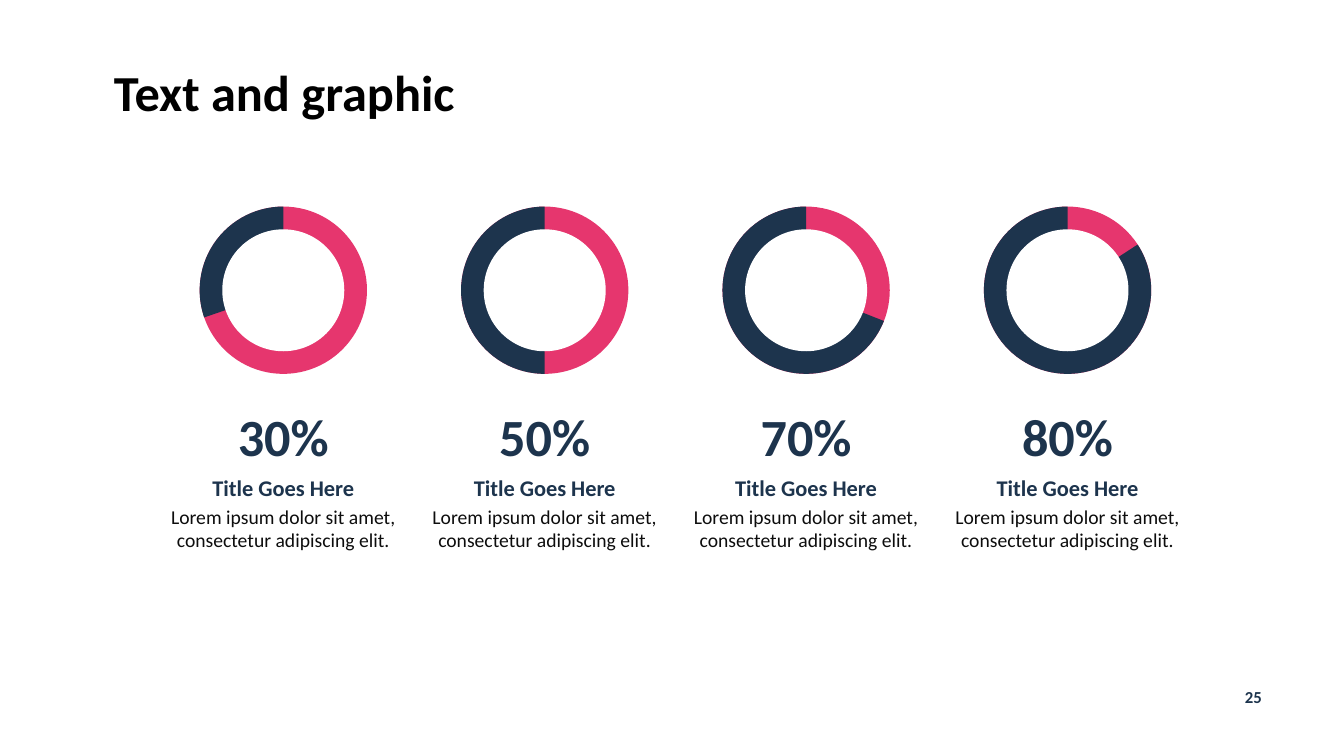
"""Build a slide with four percentage rings, each over a heading and a caption."""
from dataclasses import dataclass

from pptx import Presentation
from pptx.dml.color import RGBColor
from pptx.enum.shapes import MSO_SHAPE
from pptx.enum.text import MSO_ANCHOR, MSO_AUTO_SIZE, PP_ALIGN
from pptx.util import Inches, Pt


@dataclass(frozen=True)
class Theme:
    font: str = "Calibri"
    navy: str = "1D344D"
    pink: str = "E6366E"
    white: str = "FFFFFF"
    black: str = "000000"
    body: str = "0D0D0D"
    title_size: float = 36
    number_size: float = 37.3
    heading_size: float = 16
    caption_size: float = 14
    page_size: float = 12


th = Theme()
prs = Presentation()
prs.slide_width, prs.slide_height = Inches(13.33), Inches(7.5)
s = prs.slides.add_slide(prs.slide_layouts[5])


def place(center, top, width, height):
    """Turn percentages of the slide into left, top, width and height."""
    w, h = prs.slide_width, prs.slide_height
    return [round(share * side / 100) for share, side in
            ((center - width / 2, w), (top, h), (width, w), (height, h))]


def write(tf, lines, align=PP_ALIGN.CENTER, margin=(0.1, 0.05)):
    """Write one single-run paragraph for each (text, size, colour, bold)."""
    tf.word_wrap = True
    tf.auto_size = MSO_AUTO_SIZE.NONE
    tf.margin_left = tf.margin_right = Inches(margin[0])
    tf.margin_top = tf.margin_bottom = Inches(margin[1])
    for i, (text, size, color, bold) in enumerate(lines):
        p = tf.add_paragraph() if i else tf.paragraphs[0]
        p.alignment = align
        p.space_before = Pt(2.7 if i else 0)
        r = p.add_run()
        r.text = text
        r.font.name, r.font.size, r.font.bold = th.font, Pt(size), bold
        r.font.color.rgb = RGBColor.from_string(color)


title = s.shapes.title
title.left, title.top, title.width, title.height = place(37.4, 8.27, 59.34, 8.67)
title.text_frame.vertical_anchor = MSO_ANCHOR.MIDDLE
write(title.text_frame, [("Text and graphic", th.title_size, th.black, True)],
      PP_ALIGN.LEFT)
title.text_frame.paragraphs[0].line_spacing = 0.9

first_center, pitch = 21.08, 19.45
ring = (27.33, 12.45, 22.13)
hole = (30.33, 9.08, 16.13)
rings = [("30%", 161), ("50%", 90), ("70%", 21.6), ("80%", 326.9)]

for col, (number, start) in enumerate(rings):
    center = first_center + col * pitch
    group = s.shapes.add_group_shape()
    for kind, size, color in ((MSO_SHAPE.OVAL, ring, th.pink),
                              (MSO_SHAPE.PIE, ring, th.navy),
                              (MSO_SHAPE.OVAL, hole, th.white)):
        sp = group.shapes.add_shape(kind, *place(center, *size))
        sp.shadow.inherit = False
        sp.fill.solid()
        sp.fill.fore_color.rgb = RGBColor.from_string(color)
        sp.line.fill.background()
        if kind == MSO_SHAPE.PIE:
            sp.adjustments[0] = start * 0.6
            sp.adjustments[1] = 270 * 0.6

    tb = s.shapes.add_textbox(*place(center, 52.53, 12.45, 10.13))
    write(tb.text_frame, [(number, th.number_size, th.navy, True)],
          margin=(0.13, 0.07))
    tb = s.shapes.add_textbox(*place(center, 62.67, 17.4, 10.4))
    write(tb.text_frame, [
        ("Title Goes Here", th.heading_size, th.navy, True),
        ("Lorem ipsum dolor sit amet, consectetur adipiscing elit.",
         th.caption_size, th.body, False),
    ], margin=(0, 0))

tb = s.shapes.add_textbox(*place(93.25, 90.13, 7.5, 4))
write(tb.text_frame, [("25", th.page_size, th.navy, True)])

prs.save("out.pptx")
